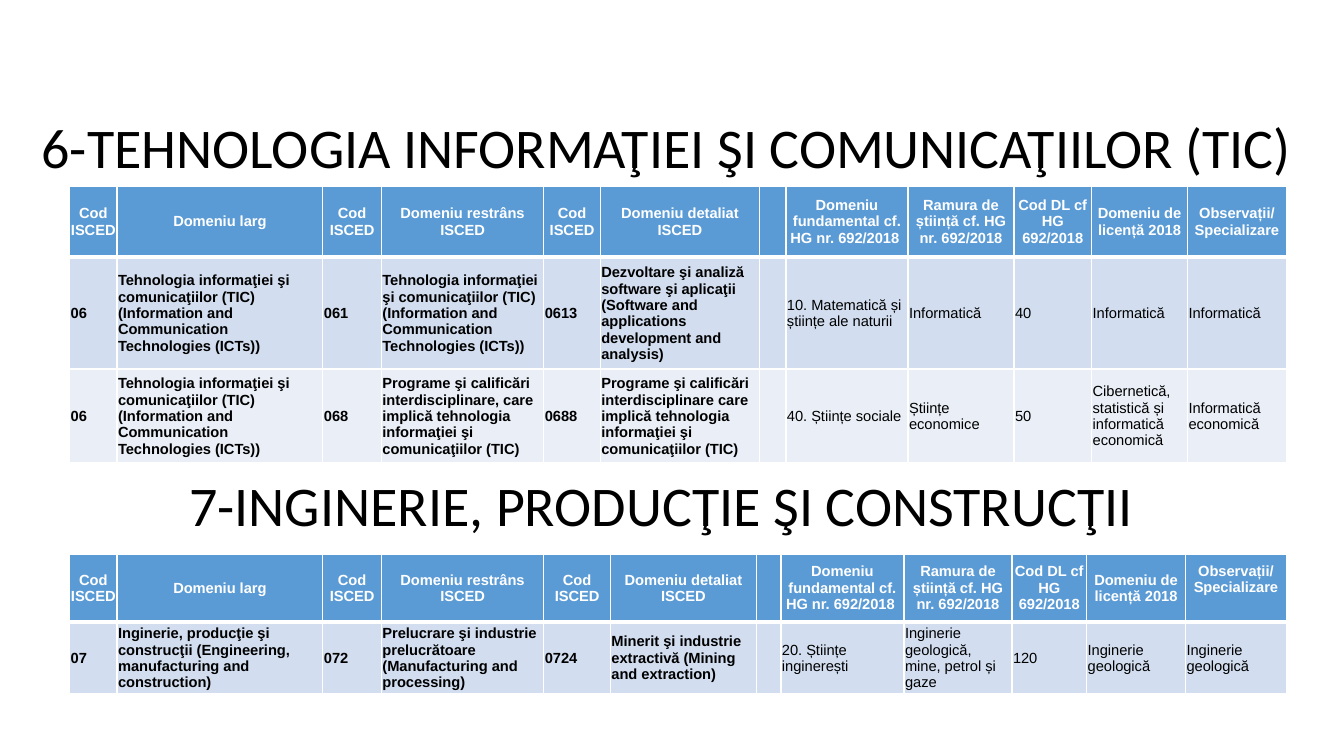
"""Build a slide with two tables that map ISCED codes to fields of study."""
from dataclasses import dataclass

from lxml.etree import SubElement as Sub
from pptx import Presentation
from pptx.dml.color import RGBColor as Rgb
from pptx.enum.text import MSO_ANCHOR as Anchor, PP_ALIGN as Align
from pptx.oxml.ns import qn
from pptx.slide import Slide
from pptx.table import _Cell as Cell
from pptx.text.text import _Paragraph as Para
from pptx.util import Inches, Pt


@dataclass(frozen=True)
class Theme:
    head: str = "5B9BD5"
    bands: tuple[str, ...] = ("D2DEEF", "EAEFF7")
    light: str = "FFFFFF"
    dark: str = "000000"
    title_font: str = "Calibri"
    title_size: float = 40
    cell_font: str = "Arial"
    cell_size: float = 10.5
    thin: float = 1
    thick: float = 3
    inset: float = 0.75


@dataclass(frozen=True)
class Title:
    text: str
    left: float
    top: float
    width: float
    height: float = 9.6


@dataclass(frozen=True)
class Grid:
    top: float
    cols: tuple[float, ...]
    rows: tuple[float, ...]
    body: tuple[tuple[str, ...], ...]
    left: float = 5.18
    width: float = 90.55


THEME = Theme()
WIDE, TALL = Inches(13.33), Inches(7.5)
GAP = 6

HEAD = (
    "Cod ISCED", "Domeniu larg", "Cod ISCED", "Domeniu restrâns ISCED",
    "Cod ISCED", "Domeniu detaliat ISCED", "",
    "Domeniu fundamental cf. HG nr. 692/2018 ",
    "Ramura de știință cf. HG nr. 692/2018", "Cod DL cf HG 692/2018",
    "Domeniu de licență 2018", "Observații/ Specializare",
)
TIC = ("Tehnologia informaţiei şi comunicaţiilor (TIC) "
       "(Information and Communication Technologies (ICTs))")

TITLES = (
    Title("6-TEHNOLOGIA INFORMAŢIEI ŞI COMUNICAŢIILOR (TIC)", 1.95, 15.07, 95.27),
    Title("7-INGINERIE, PRODUCŢIE ŞI CONSTRUCŢII ", 6.53, 62.4, 86.27),
)
GRIDS = (
    Grid(
        24.67,
        (0.47, 2.04, 0.58, 1.61, 0.56, 1.58, 0.26, 1.21, 1.05, 0.77, 0.95, 0.98),
        (9.33, 14.8, 12.4),
        (
            ("06", TIC, "061", TIC, "0613",
             "Dezvoltare şi analiză software şi aplicaţii (Software and "
             "applications development and analysis)",
             "", "10. Matematică și științe ale naturii", "Informatică", "40",
             "Informatică", "Informatică"),
            ("06", TIC, "068",
             "Programe şi calificări interdisciplinare, care implică "
             "tehnologia informaţiei şi comunicaţiilor (TIC)",
             "0688",
             "Programe şi calificări interdisciplinare care implică "
             "tehnologia informaţiei şi comunicaţiilor (TIC)",
             "", "40. Științe sociale", "Științe economice", "50",
             "Cibernetică, statistică și informatică economică",
             "Informatică economică"),
        ),
    ),
    Grid(
        73.33,
        (0.47, 2.04, 0.58, 1.61, 0.66, 1.45, 0.24, 1.22, 1.07, 0.74, 0.98, 1),
        (8.93, 8.67),
        (
            ("07",
             "Inginerie, producţie şi construcţii (Engineering, "
             "manufacturing and construction)",
             "072",
             "Prelucrare şi industrie prelucrătoare (Manufacturing and "
             "processing)",
             "0724", "Minerit şi industrie extractivă (Mining and extraction)",
             "", "20. Științe inginerești",
             "Inginerie geologică, mine, petrol și gaze", "120",
             "Inginerie geologică", "Inginerie geologică"),
        ),
    ),
)


def wide(share: float) -> int:
    """Turn a percentage of the slide's width into a length."""
    return round(WIDE * share / 100)


def tall(share: float) -> int:
    """Turn a percentage of the slide's height into a length."""
    return round(TALL * share / 100)


def style(para: Para, face: str, size: float, tint: str, bold: bool) -> None:
    """Format the runs of a paragraph."""
    for run in para.runs:
        font = run.font
        font.name, font.size, font.bold = face, Pt(size), bold
        font.color.rgb = Rgb.from_string(tint)


def edge(cell: Cell, tag: str, size: float) -> None:
    """Draw one border of a cell."""
    line = Sub(cell._tc.get_or_add_tcPr(), qn(tag), w=str(Pt(size)))
    fill = Sub(line, qn("a:solidFill"))
    Sub(fill, qn("a:srgbClr"), val=THEME.light)


def put_cell(cell: Cell, text: str, row: int, col: int) -> None:
    """Fill and format one table cell."""
    top = row == 0
    for tag in ("a:lnL", "a:lnR", "a:lnT", "a:lnB"):
        heavy = (top and tag == "a:lnB") or (row == 1 and tag == "a:lnT")
        edge(cell, tag, THEME.thick if heavy else THEME.thin)
    shade = THEME.head if top else THEME.bands[(row - 1) % len(THEME.bands)]
    cell.fill.solid()
    cell.fill.fore_color.rgb = Rgb.from_string(shade)
    cell.vertical_anchor = Anchor.MIDDLE
    inset = Pt(0 if top else THEME.inset)
    cell.margin_left = cell.margin_right = cell.margin_top = inset
    cell.margin_bottom = 0
    cell.text_frame.text = text
    para = cell.text_frame.paragraphs[0]
    para.alignment = Align.CENTER if top else Align.LEFT
    tint = THEME.light if top else THEME.dark
    style(para, THEME.cell_font, THEME.cell_size, tint, top or col < GAP)


def put_grid(slide: Slide, grid: Grid) -> None:
    """Add one table to the slide."""
    data = (HEAD, *grid.body)
    table = slide.shapes.add_table(
        len(data), len(HEAD), wide(grid.left), tall(grid.top),
        wide(grid.width), tall(sum(grid.rows))).table
    table.horz_banding = False
    for col, part in zip(table.columns, grid.cols):
        col.width = wide(grid.width * part / sum(grid.cols))
    for row, share in zip(table.rows, grid.rows):
        row.height = tall(share)
    for y, texts in enumerate(data):
        for x, text in enumerate(texts):
            put_cell(table.cell(y, x), text, y, x)
    if grid is GRIDS[-1]:
        table.cell(0, len(HEAD) - 1).margin_bottom = Pt(THEME.cell_size * 1.15)


def put_title(slide: Slide, title: Title) -> None:
    """Add one heading to the slide."""
    box = slide.shapes.add_textbox(
        wide(title.left), tall(title.top), wide(title.width), tall(title.height))
    frame = box.text_frame
    frame.word_wrap = True
    frame.vertical_anchor = Anchor.MIDDLE
    frame.text = title.text
    para = frame.paragraphs[0]
    para.alignment, para.line_spacing = Align.CENTER, 0.9
    style(para, THEME.title_font, THEME.title_size, THEME.dark, False)


def main() -> None:
    """Build the slide and save it."""
    deck = Presentation()
    deck.slide_width, deck.slide_height = WIDE, TALL
    slide = deck.slides.add_slide(deck.slide_layouts[6])
    for title, grid in zip(TITLES, GRIDS):
        put_title(slide, title)
        put_grid(slide, grid)
    deck.save("out.pptx")


if __name__ == "__main__":
    main()
